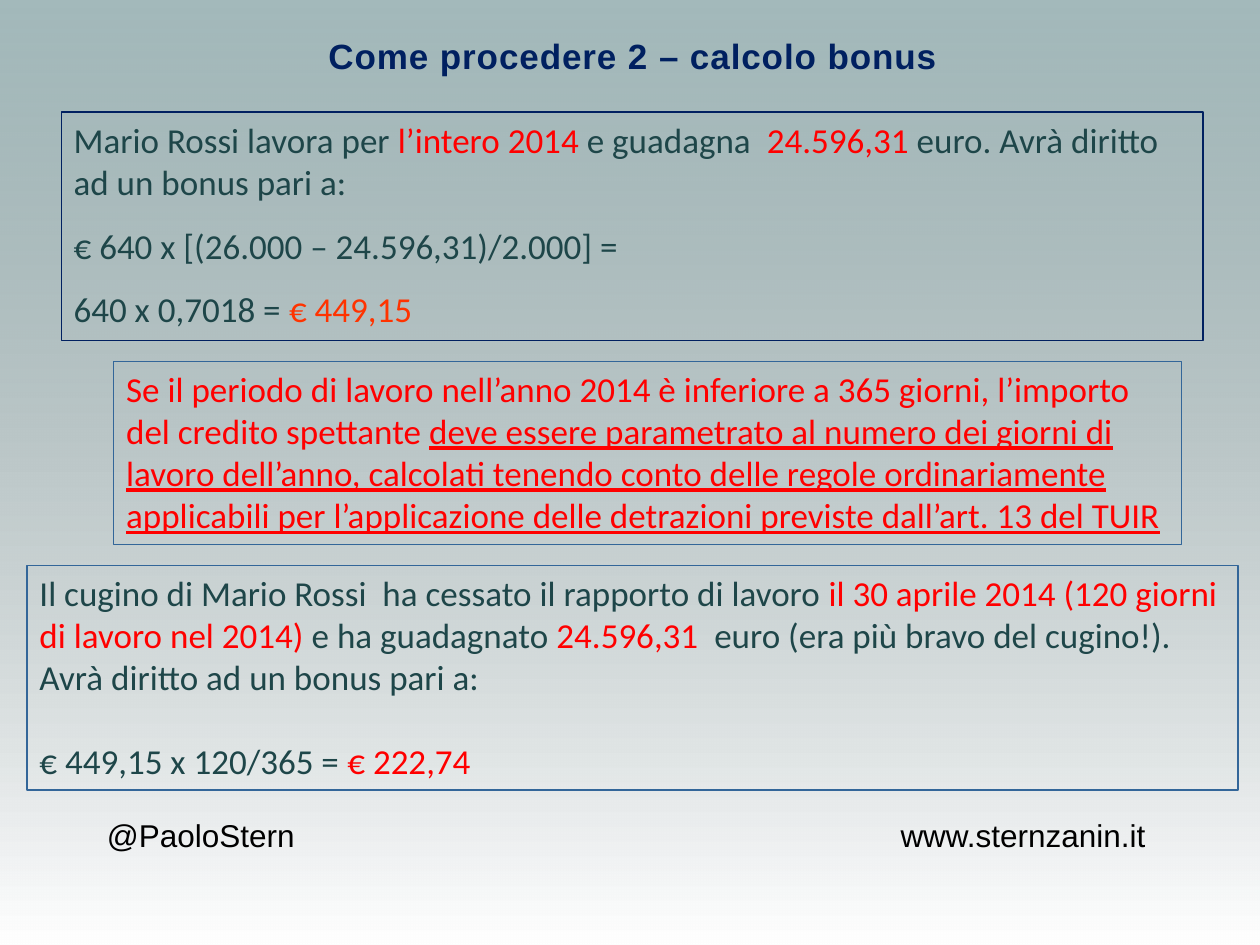
from lxml.etree import SubElement
from pptx import Presentation
from pptx.dml.color import RGBColor
from pptx.enum.shapes import MSO_SHAPE
from pptx.enum.text import MSO_ANCHOR, PP_ALIGN
from pptx.oxml.ns import qn
from pptx.util import Pt

DARK, RED, ORANGE = "1E4649", "FF0000", "FF3300"
NAVY, BLUE = "002060", "336699"


def rgb(hex_color):
    return RGBColor.from_string(hex_color)


prs = Presentation()
prs.slide_width, prs.slide_height = Pt(720), Pt(540)
slide = prs.slides.add_slide(prs.slide_layouts[5])
slide.background.fill.solid()
slide.background.fill.fore_color.rgb = rgb("BBE0E3")

# Grey-to-white veil over the background
veil = slide.shapes.add_shape(MSO_SHAPE.RECTANGLE, 0, 0, Pt(720), Pt(540))
veil.shadow.inherit = False
veil.line.fill.background()
veil.fill.gradient()
veil.fill.gradient_angle = 270
for stop, position, color in zip(veil.fill.gradient_stops, (0, 1), ("808080", "FFFFFF")):
    stop.position = position
    stop.color.rgb = rgb(color)
first_color = next(veil.fill._fill._gradFill.iter(qn("a:srgbClr")))
SubElement(first_color, qn("a:alpha"), val="40000")

# Title, brought in front of the veil
title = slide.shapes.title
veil.element.addnext(title.element)
title.left, title.top, title.width, title.height = Pt(1.5), Pt(16), Pt(720), Pt(32)
title.text_frame.text = "Come procedere 2 – calcolo bonus"
heading = title.text_frame.paragraphs[0]
heading.alignment = PP_ALIGN.CENTER
heading.font.name, heading.font.size, heading.font.bold = "Arial", Pt(20), True
heading.font.color.rgb = rgb(NAVY)
heading.runs[0].font._element.set("spc", "50")

# Contact details
for left, width, contact in ((54, 130, "@PaoloStern"), (507.5, 176, "www.sternzanin.it")):
    footer = slide.shapes.add_textbox(Pt(left), Pt(463), Pt(width), Pt(29)).text_frame
    footer.word_wrap = True
    footer.text = contact
    font = footer.paragraphs[0].font
    font.name, font.size = "Arial", Pt(18)
    font.color.rgb = rgb("000000")

# Each example: place, line colour, space after, paragraphs of
# (space before, runs of (text, colour, underlined))
examples = [
    ((35, 64, 652.5, 130.5), NAVY, 12.5, [
        (0, [("Mario Rossi lavora per ", DARK, False),
             ("l’intero 2014 ", RED, False),
             ("e guadagna  ", DARK, False),
             ("24.596,31", RED, False),
             (" euro. Avrà diritto ad un bonus pari a:", DARK, False)]),
        (0, [("€ 640 x [(26.000 – 24.596,31)/2.000] =", DARK, False)]),
        (0, [("640 x 0,7018 = ", DARK, False), ("€ 449,15", ORANGE, False)]),
    ]),
    ((65, 206.5, 610, 104.5), BLUE, 0, [
        (0, [("Se il periodo di lavoro nell’anno 2014 è inferiore a 365 giorni, l’importo",
              RED, False)]),
        (0, [("del credito spettante ", RED, False),
             ("deve essere parametrato al numero dei giorni di lavoro dell’anno, calcolati "
              "tenendo conto delle regole ordinariamente applicabili per l’applicazione "
              "delle detrazioni previste dall’art. 13 del TUIR", RED, True)]),
    ]),
    ((15.5, 323, 692, 128.5), BLUE, 0, [
        (0, [("Il cugino di Mario Rossi  ha cessato il rapporto di lavoro ", DARK, False),
             ("il 30 aprile 2014 (120 giorni di lavoro nel 2014)", RED, False),
             (" e ha guadagnato ", DARK, False),
             ("24.596,31", RED, False),
             ("  euro (era più bravo del cugino!).", DARK, False)]),
        (0, [("Avrà diritto ad un bonus pari a:", DARK, False)]),
        (24, [("€ 449,15 x 120/365 = ", DARK, False), ("€ 222,74", RED, False)]),
    ]),
]

for place, line_color, space_after, paragraphs in examples:
    example = slide.shapes.add_shape(MSO_SHAPE.RECTANGLE, *map(Pt, place))
    example.shadow.inherit = False
    example.fill.background()
    example.line.color.rgb = rgb(line_color)
    example.line.width = Pt(0.75)
    frame = example.text_frame
    frame.word_wrap = True
    frame.vertical_anchor = MSO_ANCHOR.TOP
    for index, (space_before, runs) in enumerate(paragraphs):
        paragraph = frame.add_paragraph() if index else frame.paragraphs[0]
        paragraph.alignment = PP_ALIGN.LEFT
        paragraph.space_before, paragraph.space_after = Pt(space_before), Pt(space_after)
        paragraph.font.name, paragraph.font.size = "Calibri", Pt(20)
        for text, color, underlined in runs:
            run = paragraph.add_run()
            run.text = text
            run.font.color.rgb = rgb(color)
            if underlined:
                run.font.underline = True

prs.save("out.pptx")
